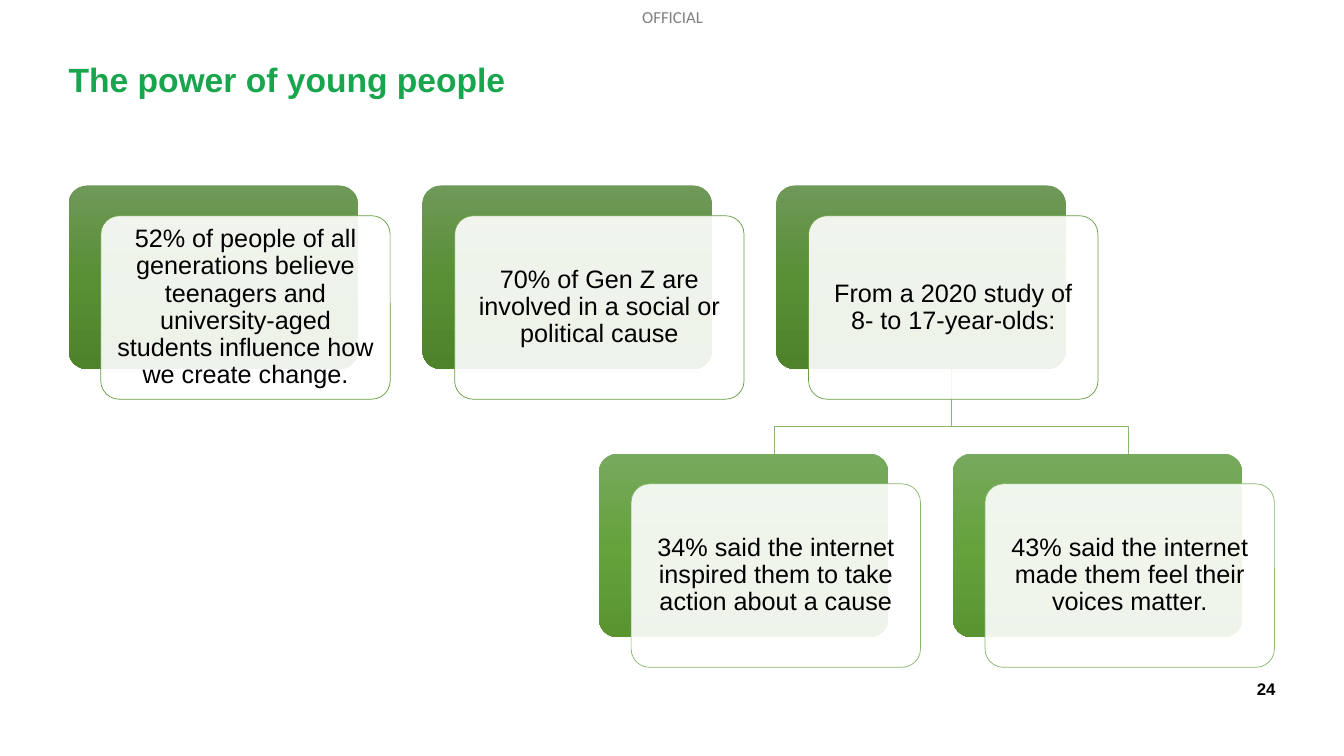
from copy import deepcopy

from pptx import Presentation
from pptx.dml.color import RGBColor as RGB
from pptx.enum.shapes import MSO_SHAPE as SHAPE
from pptx.enum.text import MSO_ANCHOR as ANCHOR, MSO_AUTO_SIZE as AUTO, PP_ALIGN as ALIGN
from pptx.oxml import parse_xml
from pptx.oxml.ns import nsdecls, qn
from pptx.util import Pt

PX = 9144
COLORS = {
    "title": "18A54D", "black": "000000", "white": "FFFFFF",
    "upper_line": "669D40", "lower_line": "88B76F",
    "upper_top": "6F9959", "upper_mid": "598F35", "upper_end": "4E822B",
    "lower_top": "78A95E", "lower_mid": "65A23C", "lower_end": "599431",
}
CARD_W, CARD_H, PITCH = 287, 182, 351
SHIFT_X, SHIFT_Y = 32, 30
LEFT, UPPER_Y, LOWER_Y = 68, 184, 450
LOWER_LEFT = LEFT + PITCH * 3 // 2
UPPER_TEXTS = [
    "52% of people of all generations believe teenagers and university-aged students influence how we create change.",
    "70% of Gen Z are involved in a social or political cause",
    "From a 2020 study of 8- to 17-year-olds:",
]
LOWER_TEXTS = [
    "34% said the internet inspired them to take action about a cause",
    "43% said the internet made them feel their voices matter.",
]


def color(name):
    return RGB.from_string(COLORS[name])


def set_alpha(element, percent):
    clr = next(element.iter(qn("a:srgbClr")))
    clr.append(parse_xml(f'<a:alpha {nsdecls("a")} val="{percent * 1000}"/>'))


def write(tf, text, size=18, font="Arial", fill="black", bold=False, align=ALIGN.LEFT,
          anchor=ANCHOR.TOP, inset=0, spacing=1.0, wrap=True, alpha=None):
    tf.word_wrap = wrap
    tf.auto_size = AUTO.NONE
    tf.vertical_anchor = anchor
    tf.margin_left = tf.margin_right = tf.margin_top = tf.margin_bottom = inset * PX
    p = tf.paragraphs[0]
    p.alignment = align
    p.line_spacing = spacing
    r = p.add_run()
    r.text = text
    r.font.size, r.font.name, r.font.bold = Pt(size), font, bold
    r.font.color.rgb = color(fill)
    if alpha:
        set_alpha(r._r, alpha)


class Deck:
    """Holds the style and the current slide."""

    def __init__(self):
        self.prs = Presentation()
        self.prs.slide_width, self.prs.slide_height = 1333 * PX, 750 * PX
        self.s = self.prs.slides.add_slide(self.prs.slide_layouts[5])

    def title(self, text, x, y, w, h):
        sp = self.s.shapes.title
        sp.left, sp.top, sp.width, sp.height = (v * PX for v in (x, y, w, h))
        write(sp.text_frame, text, size=24, fill="title", bold=True, spacing=0.9)

    def text(self, text, x, y, w, h, **fmt):
        sp = self.s.shapes.add_textbox(*(v * PX for v in (x, y, w, h)))
        write(sp.text_frame, text, **fmt)

    def rounded(self, x, y):
        box = (v * PX for v in (x, y, CARD_W, CARD_H))
        sp = self.s.shapes.add_shape(SHAPE.ROUNDED_RECTANGLE, *box)
        sp.adjustments[0] = 0.1
        sp.shadow.inherit = False
        return sp

    def card(self, text, x, y, level):
        back = self.rounded(x, y)
        back.line.fill.background()
        back.fill.gradient()
        back.fill.gradient_angle = 270
        first = next(back._element.iter(qn("a:gs")))
        first.addnext(deepcopy(first))
        for stop, part, pos in zip(back.fill.gradient_stops, ("top", "mid", "end"), (0, 0.5, 1)):
            stop.color.rgb = color(f"{level}_{part}")
            stop.position = pos

        front = self.rounded(x + SHIFT_X, y + SHIFT_Y)
        front.fill.solid()
        front.fill.fore_color.rgb = color("white")
        set_alpha(front._element.spPr, 90)
        front.line.color.rgb = color(f"{level}_line")
        front.line.width = Pt(0.5)
        self.text(text, x + SHIFT_X + 5, y + SHIFT_Y + 5, CARD_W - 10, CARD_H - 10,
                  align=ALIGN.CENTER, anchor=ANCHOR.MIDDLE, inset=7, spacing=0.9)

    def branch(self, points):
        fb = self.s.shapes.build_freeform(*points[0], scale=PX)
        fb.add_line_segments(points[1:], close=False)
        sp = fb.convert_to_shape()
        sp.shadow.inherit = False
        sp.fill.background()
        sp.line.color.rgb = color("lower_line")
        sp.line.width = Pt(0.5)


def main():
    deck = Deck()
    deck.text("OFFICIAL", 637, 7, 64, 20, size=12, font="Calibri", wrap=False, alpha=50)
    deck.title("The power of young people", 68, 63, 1197, 96)

    stem_x = LEFT + 2 * PITCH + SHIFT_X + CARD_W // 2 - 1
    for side in (1, -1):
        end_x = stem_x + side * PITCH // 2
        deck.branch([(stem_x, UPPER_Y + CARD_H), (stem_x, 423), (end_x, 423), (end_x, LOWER_Y)])

    for level, texts, x, y in (("upper", UPPER_TEXTS, LEFT, UPPER_Y),
                               ("lower", LOWER_TEXTS, LOWER_LEFT, LOWER_Y)):
        for i, text in enumerate(texts):
            deck.card(text, x + i * PITCH, y, level)

    deck.text("24", 966, 666, 299, 35, size=12, bold=True, align=ALIGN.RIGHT, anchor=ANCHOR.MIDDLE)
    deck.prs.save("out.pptx")


if __name__ == "__main__":
    main()
